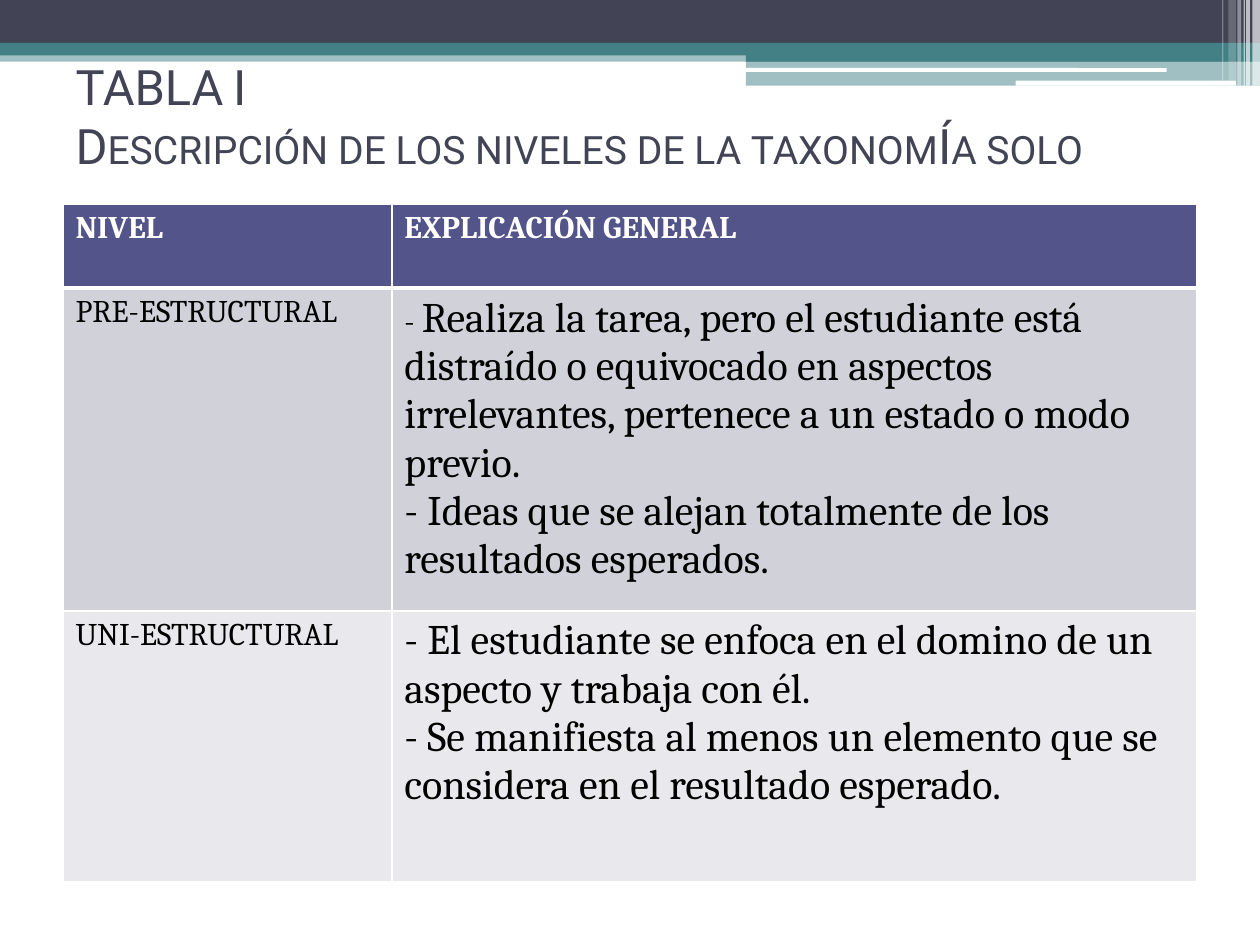
from lxml import etree
from pptx import Presentation, util as u
from pptx.dml.color import RGBColor
from pptx.enum import shapes, text
from pptx.oxml import ns

WIDTH, HEIGHT = 10, 7.5
NAVY, TEAL, WHITE, BLACK = "424456", "438086", "FFFFFF", "000000"

HEADINGS = ["NIVEL", "EXPLICACIÓN GENERAL"]
# Each level: its name, then paragraphs made of (wording, size) runs
LEVELS = [
    ("PRE-ESTRUCTURAL", [
        [("- ", 18), ("Realiza la tarea, pero el estudiante está distraído o "
                      "equivocado en aspectos irrelevantes, pertenece a un "
                      "estado o modo previo.", 24)],
        [("- Ideas que se alejan totalmente de los resultados esperados.", 24)],
    ]),
    ("UNI-ESTRUCTURAL", [
        [("- El estudiante se enfoca en el domino de un aspecto y trabaja "
          "con él.", 24)],
        [("- Se manifiesta al menos un elemento que se considera en el "
          "resultado esperado.", 24)],
    ]),
]


def paint(fill, hex_color):
    fill.solid()
    fill.fore_color.rgb = RGBColor.from_string(hex_color)


def add_run(paragraph, wording, size, font, color, bold=False):
    run = paragraph.add_run()
    run.text = wording
    run.font.size, run.font.name, run.font.bold = u.Pt(size), font, bold
    paint(run.font.fill, color)
    return run


def add_bar(slide, box, color, opacity=100, kind=shapes.MSO_SHAPE.RECTANGLE):
    bar = slide.shapes.add_shape(kind, *map(u.Inches, box))
    bar.shadow.inherit = False
    paint(bar.fill, color)
    bar.line.fill.background()
    if opacity < 100:
        tint = bar.element.spPr.find(f"{ns.qn('a:solidFill')}/{ns.qn('a:srgbClr')}")
        etree.SubElement(tint, ns.qn("a:alpha"), val=str(opacity * 1000))


def add_banner(slide, width):
    """Layered bands across the top, with light stripes at the right end."""
    tab = 5.92
    add_bar(slide, (0, 0.4, width, 0.09), TEAL, 50)
    add_bar(slide, (0, 0, width, 0.34), NAVY)
    add_bar(slide, (0, 0.34, width, 0.1), TEAL)
    add_bar(slide, (tab, 0.39, width - tab, 0.1), TEAL)
    add_bar(slide, (tab, 0.48, width - tab, 0.2), TEAL, 50)
    for slot in [(5.91, 0.54, 3.35, 0.03), (8.06, 0.64, 1.75, 0.04)]:
        add_bar(slide, slot, WHITE, kind=shapes.MSO_SHAPE.ROUNDED_RECTANGLE)
    stripes = [(0.06, 0.06, 0.68, 65), (0.11, 0.03, 0.68, 65),
               (0.13, 0.01, 0.68, 60), (0.18, 0.03, 0.68, 40),
               (0.25, 0.06, 0.64, 20), (0.3, 0.01, 0.64, 30)]
    for from_right, thickness, depth, opacity in stripes:
        add_bar(slide, (width - from_right, 0, thickness, depth), WHITE, opacity)


def fill_title(title, box):
    title.left, title.top, title.width, title.height = map(u.Inches, box)
    frame = title.text_frame
    frame.word_wrap = True
    frame.auto_size = text.MSO_AUTO_SIZE.NONE
    frame.vertical_anchor = text.MSO_ANCHOR.MIDDLE
    frame.margin_bottom = u.Inches(0.52)
    heading = frame.paragraphs[0]
    heading.alignment = text.PP_ALIGN.LEFT
    for index, line in enumerate(
            ["TABLA I", "Descripción de los niveles de la taxonomÍa solo"]):
        if index:
            heading.add_line_break()
        run = add_run(heading, line, 27.9, "Roboto", NAVY)
        run.font.element.set("cap", "small") if hasattr(run.font, "element") \
            else run._r.get_or_add_rPr().set("cap", "small")


def set_borders(cell, widths):
    """Draw white borders; widths maps a side (L, R, T, B) to points."""
    properties = cell._tc.get_or_add_tcPr()
    for index, (side, points) in enumerate(widths.items()):
        line = etree.Element(ns.qn(f"a:ln{side}"), w=str(u.Pt(points)))
        solid = etree.SubElement(line, ns.qn("a:solidFill"))
        etree.SubElement(solid, ns.qn("a:srgbClr"), val=WHITE)
        properties.insert(index, line)


def fill_cell(cell, paragraphs, fill, color, bold=False, top=1, bottom=1):
    paint(cell.fill, fill)
    set_borders(cell, {"L": 1, "R": 1, "T": top, "B": bottom})
    frame = cell.text_frame
    for index, runs in enumerate(paragraphs):
        paragraph = frame.add_paragraph() if index else frame.paragraphs[0]
        for wording, size in runs:
            add_run(paragraph, wording, size, "Cambria", color, bold)


def add_levels_table(slide, box):
    left, top, width, height = box
    name_width = 0.29 * width
    table = slide.shapes.add_table(
        len(LEVELS) + 1, len(HEADINGS), *map(u.Inches, box)).table
    for column, size in zip(table.columns, (name_width, width - name_width)):
        column.width = u.Inches(size)
    for row, share in zip(table.rows, (0.124, 0.476, 0.4)):
        row.height = u.Inches(share * height)

    for column, heading in enumerate(HEADINGS):
        fill_cell(table.cell(0, column), [[(heading, 18)]], "53548A", WHITE,
                  bold=True, bottom=3)
    for row, (level, explanation) in enumerate(LEVELS, 1):
        band = "D1D1DA" if row % 2 else "E9E9ED"
        above = 3 if row == 1 else 1
        for column, content in enumerate([[[(level, 18)]], explanation]):
            fill_cell(table.cell(row, column), content, band, BLACK, top=above)


def main():
    deck = Presentation()
    deck.slide_width, deck.slide_height = u.Inches(WIDTH), u.Inches(HEIGHT)
    slide = deck.slides.add_slide(deck.slide_layouts.get_by_name("Title Only"))
    margin = 0.05 * WIDTH
    content_width = WIDTH - 2 * margin
    add_banner(slide, WIDTH)
    fill_title(slide.shapes.title, (margin, 0.08 * HEIGHT, content_width, 1.1))
    add_levels_table(slide, (margin, 1.62, content_width, 5.38))
    deck.save("out.pptx")


if __name__ == "__main__":
    main()
